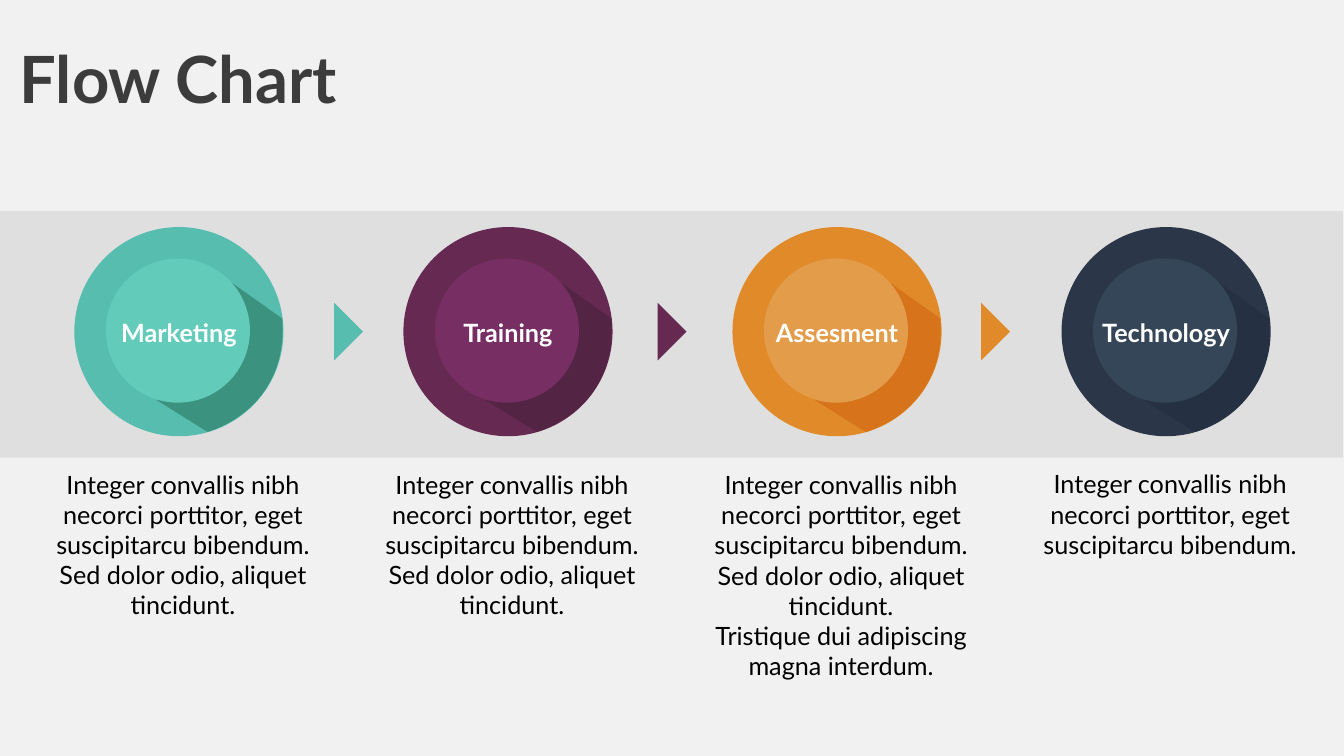
from pptx import Presentation
from pptx.dml.color import RGBColor
from pptx.enum.shapes import MSO_SHAPE
from pptx.enum.text import MSO_ANCHOR, MSO_AUTO_SIZE, PP_ALIGN
from pptx.util import Inches, Pt

TITLE = "Flow Chart"
INTRO = "Integer convallis nibh necorci porttitor, eget suscipitarcu bibendum."
DETAIL = f"{INTRO} Sed dolor odio, aliquet tincidunt."
STEPS = [
    {"label": "Marketing", "body": [DETAIL], "lines": 5,
     "ring": "56BDAF", "shade": "3B927F", "core": "62CBB9"},
    {"label": "Training", "body": [DETAIL], "lines": 5,
     "ring": "662952", "shade": "542444", "core": "772F63"},
    {"label": "Assesment", "body": [DETAIL, "Tristique dui adipiscing", "magna interdum."], "lines": 7,
     "ring": "E08A29", "shade": "D6731B", "core": "E39D4A"},
    {"label": "Technology", "body": [INTRO], "lines": 3,
     "ring": "2C3649", "shade": "253143", "core": "344658"},
]
THEME = {
    "font": "Lato", "title_size": 93, "text_size": 36,
    "background": "F1F1F1", "band": "DFDFDF",
    "title": "3C3C3C", "body": "000000", "label": "FFFFFF",
}
FIRST_CENTER, STEP_PITCH = 3.55, 6.53
FIRST_ARROW, ARROW_PITCH, ARROW_SIZE = 6.63, 6.42, 0.81
MIDDLE, RING_SIZE, CORE_SIZE, CORE_RISE = 6.58, 4.15, 2.86, 0.02
BODY_TOP, BODY_WIDTH, LINE_HEIGHT = 9.29, 5.12, 0.605
LABEL_WIDTH, LABEL_HEIGHT = 2.8, 0.61
SHADE_START, SHADE_END = (-0.44, 1.36), (1.05, -0.97)
SHADE_CURVE = [(0.57, 1.99), (0.57, 1.99), (2.19, 1.57), (2.05, -0.26)]
CURVE_STEPS = 24


def paint(shape, color):
    shape.shadow.inherit = False
    shape.fill.solid()
    shape.fill.fore_color.rgb = RGBColor.from_string(color)
    shape.line.fill.background()
    return shape


def add_centered(page, kind, center, middle, size, color):
    shape = page.shapes.add_shape(
        kind, Inches(center - size / 2), Inches(middle - size / 2), Inches(size), Inches(size))
    return paint(shape, color)


def add_text(page, paragraphs, area, size, color, bold=False, align=PP_ALIGN.CENTER, wrap=True):
    box = page.shapes.add_textbox(*map(Inches, area))
    frame = box.text_frame
    frame.margin_left = frame.margin_right = frame.margin_top = frame.margin_bottom = 0
    frame.word_wrap = wrap
    frame.auto_size = MSO_AUTO_SIZE.NONE
    frame.vertical_anchor = MSO_ANCHOR.MIDDLE
    frame.text = "\n".join(paragraphs)
    for para in frame.paragraphs:
        para.alignment = align
        for span in para.runs:
            span.font.name = THEME["font"]
            span.font.size = Pt(size)
            span.font.bold = bold
            span.font.color.rgb = RGBColor.from_string(color)


def curve_point(step):
    t = step / CURVE_STEPS
    weights = ((1 - t) ** 3, 3 * t * (1 - t) ** 2, 3 * t ** 2 * (1 - t), t ** 3)
    return tuple(sum(w * point[axis] for w, point in zip(weights, SHADE_CURVE)) for axis in (0, 1))


def add_shade(page, center, color):
    outline = [SHADE_START, *map(curve_point, range(CURVE_STEPS + 1)), SHADE_END]
    points = [(Inches(center + x), Inches(MIDDLE + y)) for x, y in outline]
    builder = page.shapes.build_freeform(*points[0])
    builder.add_line_segments(points[1:], close=True)
    paint(builder.convert_to_shape(), color)


def add_step(page, index, step):
    center = FIRST_CENTER + index * STEP_PITCH
    body_area = (center - BODY_WIDTH / 2 + 0.08, BODY_TOP, BODY_WIDTH, step["lines"] * LINE_HEIGHT)
    add_text(page, step["body"], body_area, THEME["text_size"], THEME["body"])
    add_centered(page, MSO_SHAPE.OVAL, center, MIDDLE, RING_SIZE, step["ring"])
    add_shade(page, center, step["shade"])
    add_centered(page, MSO_SHAPE.OVAL, center - 0.02, MIDDLE - CORE_RISE, CORE_SIZE, step["core"])
    label_area = (center - LABEL_WIDTH / 2, 6.29, LABEL_WIDTH, LABEL_HEIGHT)
    add_text(page, [step["label"]], label_area, THEME["text_size"], THEME["label"], bold=True, wrap=False)


def main():
    """Build the four-step flow chart slide."""
    deck = Presentation()
    deck.slide_width, deck.slide_height = Inches(26.67), Inches(15)
    page = deck.slides.add_slide(deck.slide_layouts[6])
    page.background.fill.solid()
    page.background.fill.fore_color.rgb = RGBColor.from_string(THEME["background"])

    add_text(page, [TITLE], (0.39, 0.72, 15.75, 1.65), THEME["title_size"], THEME["title"],
             bold=True, align=PP_ALIGN.LEFT)
    band = page.shapes.add_shape(MSO_SHAPE.RECTANGLE, 0, Inches(4.19), Inches(26.65), Inches(4.89))
    paint(band, THEME["band"])
    for index, step in enumerate(STEPS[:-1]):
        arrow = add_centered(page, MSO_SHAPE.RIGHT_TRIANGLE, FIRST_ARROW + index * ARROW_PITCH,
                             MIDDLE, ARROW_SIZE, step["ring"])
        arrow.rotation = 225
    for index, step in enumerate(STEPS):
        add_step(page, index, step)
    deck.save("out.pptx")


if __name__ == "__main__":
    main()
